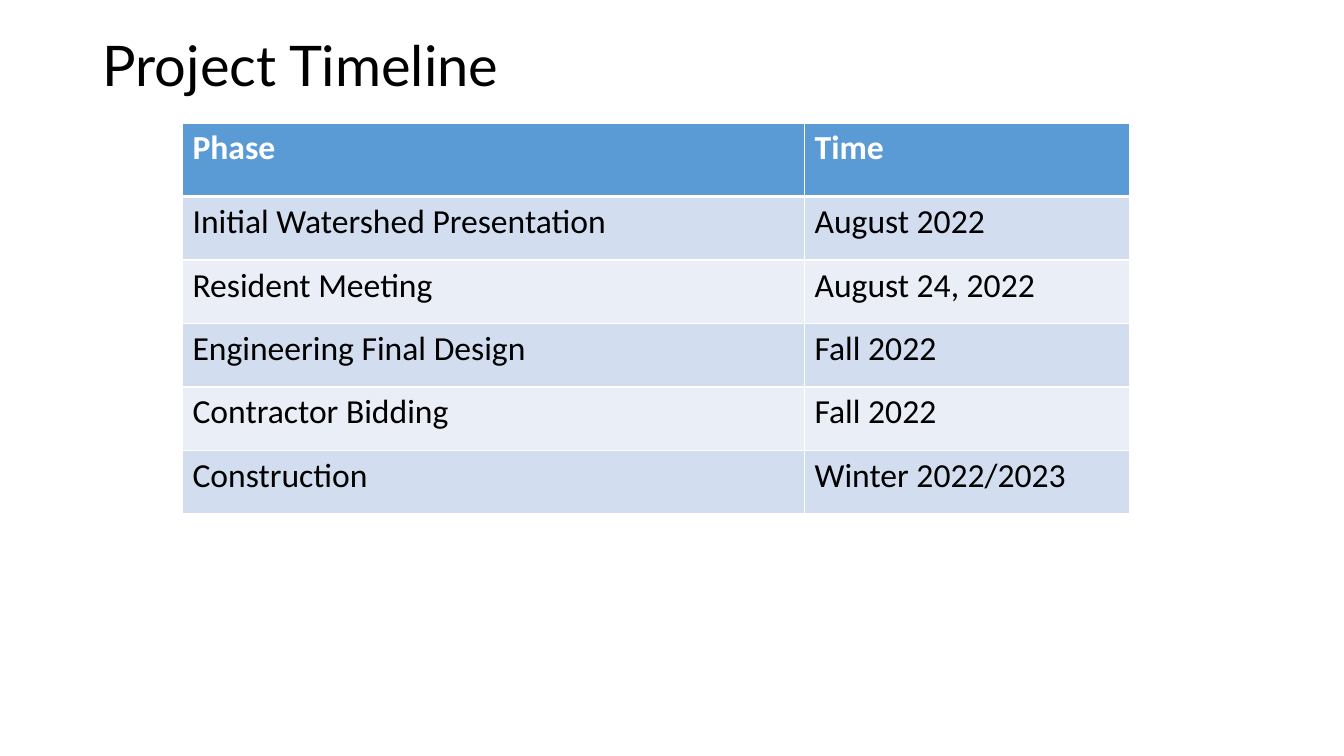
from dataclasses import dataclass

from lxml.etree import SubElement
from pptx import Presentation
from pptx.dml.color import RGBColor
from pptx.enum.text import MSO_ANCHOR
from pptx.oxml.ns import qn
from pptx.util import Emu, Pt

PX = 9144  # EMU per px, 100 px to the inch
WHITE, BLACK = "FFFFFF", "000000"
HEADER_FILL = "5B9BD5"
BAND_FILLS = ("D2DEEF", "EAEFF7")
COLUMN_WIDTHS = (617, 322)
HEADER_HEIGHT, ROW_HEIGHT = 73, 63


@dataclass(frozen=True)
class Phase:
    name: str
    time: str


PHASES = (
    Phase("Initial Watershed Presentation", "August 2022"),
    Phase("Resident Meeting", "August 24, 2022"),
    Phase("Engineering Final Design", "Fall 2022"),
    Phase("Contractor Bidding", "Fall 2022"),
    Phase("Construction", "Winter 2022/2023"),
)


def px(n: int) -> Emu:
    return Emu(n * PX)


def rgb(color: str) -> RGBColor:
    return RGBColor.from_string(color)


def add_run(p, text: str, font: str, size: int, color: str, bold: bool = False) -> None:
    r = p.add_run()
    r.text = text
    r.font.name, r.font.size, r.font.bold = font, Pt(size), bold
    r.font.color.rgb = rgb(color)


def add_title(slide, text: str) -> None:
    tf = slide.shapes.add_textbox(px(92), px(40), px(1150), px(55)).text_frame
    tf.word_wrap = True
    tf.vertical_anchor = MSO_ANCHOR.MIDDLE
    p = tf.paragraphs[0]
    p.line_spacing = 0.9
    add_run(p, text, "Lato", 40, BLACK)


def set_borders(cell, top: int, bottom: int) -> None:
    """Draw white cell borders, 1 pt at the sides; must precede the fill."""
    tc_pr = cell._tc.get_or_add_tcPr()
    for side, width in (("L", 1), ("R", 1), ("T", top), ("B", bottom)):
        ln = SubElement(tc_pr, qn(f"a:ln{side}"), w=str(Pt(width)))
        SubElement(SubElement(ln, qn("a:solidFill")), qn("a:srgbClr"), val=WHITE)


def add_timeline(slide, phases: tuple[Phase, ...]) -> None:
    rows = (Phase("Phase", "Time"), *phases)
    heights = (HEADER_HEIGHT, *[ROW_HEIGHT] * len(phases))
    table = slide.shapes.add_table(
        len(rows), len(COLUMN_WIDTHS), px(181), px(122),
        px(sum(COLUMN_WIDTHS)), px(sum(heights))).table
    table.horz_banding = False
    for column, width in zip(table.columns, COLUMN_WIDTHS):
        column.width = px(width)
    for i, (phase, height) in enumerate(zip(rows, heights)):
        table.rows[i].height = px(height)
        header = i == 0
        for j, text in enumerate((phase.name, phase.time)):
            cell = table.cell(i, j)
            set_borders(cell, 3 if i == 1 else 1, 3 if header else 1)
            cell.fill.solid()
            cell.fill.fore_color.rgb = rgb(HEADER_FILL if header else BAND_FILLS[(i - 1) % 2])
            add_run(cell.text_frame.paragraphs[0], text, "Calibri", 24,
                    WHITE if header else BLACK, header)


def main() -> None:
    prs = Presentation()
    prs.slide_width, prs.slide_height = px(1333), px(750)
    slide = prs.slides.add_slide(prs.slide_layouts[6])
    add_title(slide, "Project Timeline")
    add_timeline(slide, PHASES)
    prs.save("out.pptx")


if __name__ == "__main__":
    main()
